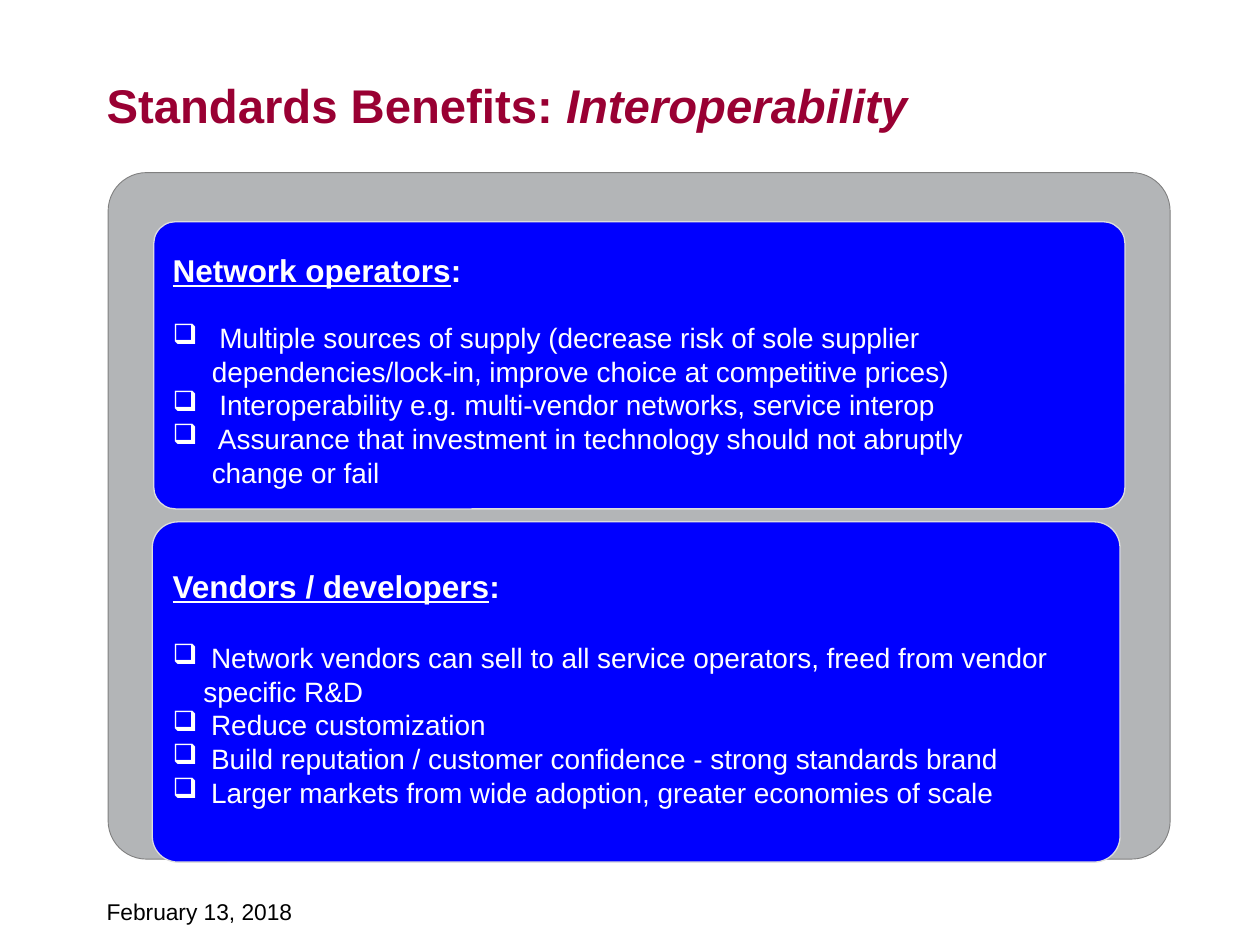
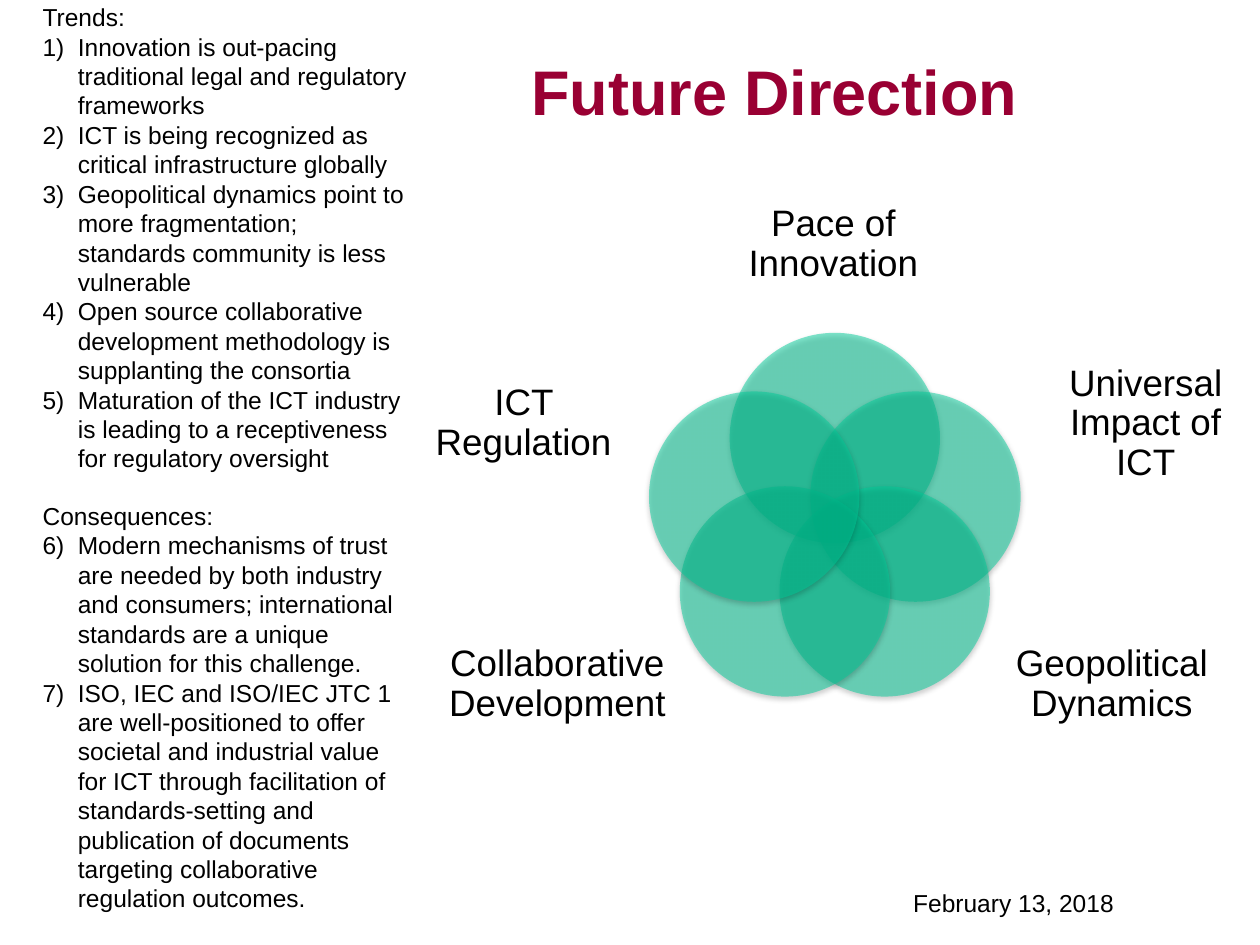
import math
import lxml.etree
import pptx
import pptx.dml.color
import pptx.enum.shapes
import pptx.enum.text
import pptx.oxml.ns
import pptx.util

Cm = pptx.util.Cm
Pt = pptx.util.Pt
qn = pptx.oxml.ns.qn
Rgb = pptx.dml.color.RGBColor.from_string
Kind = pptx.enum.shapes.MSO_SHAPE
Align = pptx.enum.text.PP_ALIGN
Side = pptx.enum.text.MSO_ANCHOR


class Theme:
    font = "Arial"
    title = Rgb("990033")
    ink = Rgb("000000")
    pale = Rgb("FFFFFF")
    panel = Rgb("B3B5B7")
    edge = Rgb("808080")
    card = Rgb("0000FF")
    rim = Rgb("DDDDDD")
    petal = Rgb("00CC99")
    head = Pt(18)
    body = Pt(16)
    label = Pt(21)
    trend = Pt(14)


def write(slide, box, paras, color, frame=None, form=None):
    area = slide.shapes.add_textbox(*map(Cm, box)).text_frame
    for key, val in {"word_wrap": True, **(frame or {})}.items():
        setattr(area, key, val)
    for spot, (runs, mark) in enumerate(paras):
        para = area.paragraphs[0] if spot == 0 else area.add_paragraph()
        for key, val in (form or {}).items():
            setattr(para, key, val)
        for words, style in runs:
            for spot, part in enumerate(words.split("\n")):
                if spot:
                    para.add_line_break()
                run = para.add_run()
                run.text = part
                for key, val in {"name": Theme.font, **style}.items():
                    setattr(run.font, key, val)
                run.font.color.rgb = color
        if mark:
            tag, attrs, indent = mark
            props = para._p.get_or_add_pPr()
            props.set("marL", str(Cm(indent)))
            props.set("indent", str(-Cm(indent)))
            lxml.etree.SubElement(props, qn(tag), attrs)
    return area


def draw(slide, kind, box, fill, line=None, width=0, bend=None):
    shape = slide.shapes.add_shape(kind, *map(Cm, box))
    shape.shadow.inherit = False
    shape.fill.solid()
    shape.fill.fore_color.rgb = fill
    if line:
        shape.line.color.rgb = line
        shape.line.width = Pt(width)
    else:
        shape.line.fill.background()
    if bend:
        shape.adjustments[0] = bend
    return shape


deck = pptx.Presentation()
deck.slide_width, deck.slide_height = Cm(25.4), Cm(19.05)
blank = deck.slide_layouts[6]
first, last = [deck.slides.add_slide(blank) for _ in range(2)]

bold = {"bold": True}
heads = [
    (first, (1.9, 0.51, 19.48, 3.18), 27,
     [("Standards Benefits: ", {}), ("Interoperability", {"italic": True})]),
    (last, (10.46, 0.36, 17.37, 2.92), 36, [("Future Direction", {})]),
]
for slide, box, size, parts in heads:
    runs = [(words, {"size": Pt(size), **bold, **style}) for words, style in parts]
    write(slide, box, [(runs, None)], Theme.title, {"vertical_anchor": Side.MIDDLE})

dates = [(first, (1.9, 17.98, 5.28, 1.27), 13), (last, (18.16, 17.78, 5.61, 1.02), 14)]
for slide, box, size in dates:
    write(slide, box, [([("February 13, 2018", {"size": Pt(size)})], None)], Theme.ink)

draw(first, Kind.ROUNDED_RECTANGLE, (2.18, 3.48, 21.41, 13.84),
     Theme.panel, Theme.edge, 0.5, 0.056)
cards = [
    ((3.1, 4.47, 19.58, 5.79), (3.23, 4.93, 18.82, 5.77), 18.4, 0.79, "Network operators", [
        "Multiple sources of supply (decrease risk of sole supplier\n"
        "dependencies/lock-in, improve choice at competitive prices)",
        "Interoperability e.g. multi-vendor networks, service interop",
        "Assurance that investment in technology should not abruptly\nchange or fail",
    ]),
    ((3.07, 10.52, 19.51, 6.86), (3.23, 11.3, 18.82, 5.87), 20.7, 0.62, "Vendors / developers", [
        "Network vendors can sell to all service operators, freed from vendor\nspecific R&D",
        "Reduce customization",
        "Build reputation / customer confidence - strong standards brand",
        "Larger markets from wide adoption, greater economies of scale",
    ]),
]
for back, box, gap, indent, name, items in cards:
    draw(first, Kind.ROUNDED_RECTANGLE, back, Theme.card, Theme.rim, 0.75, 0.076)
    style = {"size": Theme.head, **bold}
    paras = [([(name, {**style, "underline": True}), (":", style)], None)]
    for item in items:
        runs = [(" " + item, {"size": Theme.body})]
        paras.append((runs, ("a:buChar", {"char": "❑"}, indent)))
    area = write(first, box, paras, Theme.pale)
    area.paragraphs[0].space_after = Pt(gap)

mid, high, reach, wide = 16.83, 10.54, 1.71, 4.24
labels = [
    ("Pace of Innovation", (14.35, 3.51, 4.9, 2.84)),
    ("Universal Impact of ICT", (20.9, 7.01, 4.39, 3.07)),
    ("Geopolitical Dynamics", (20.22, 12.27, 4.39, 3.07)),
    ("Collaborative Development", (9.04, 12.27, 4.39, 3.07)),
    ("ICT Regulation", (8.36, 7.01, 4.39, 3.07)),
]
snug = {"vertical_anchor": Side.MIDDLE, "margin_left": 0, "margin_right": 0,
        "margin_top": 0, "margin_bottom": 0}
tight = {"alignment": Align.CENTER, "line_spacing": 0.9}
shade = {"blurRad": str(Pt(3.1)), "dist": str(Pt(1.6)), "dir": "5400000", "rotWithShape": "0"}
for turn, (words, box) in enumerate(labels):
    angle = math.tau * turn / len(labels)
    left = mid + reach * math.sin(angle) - wide / 2
    top = high - reach * math.cos(angle) - wide / 2
    petal = draw(last, Kind.OVAL, (left, top, wide, wide), Theme.petal)
    props = petal._element.spPr
    tint = props.find(qn("a:solidFill")).find(qn("a:srgbClr"))
    lxml.etree.SubElement(tint, qn("a:alpha"), val="50000")
    glow = lxml.etree.SubElement(props.find(qn("a:effectLst")), qn("a:outerShdw"), shade)
    tint = lxml.etree.SubElement(glow, qn("a:srgbClr"), val=str(Theme.ink))
    lxml.etree.SubElement(tint, qn("a:alpha"), val="38000")
    write(last, box, [([(words, {"size": Theme.label})], None)], Theme.ink, snug, tight)

lists = [
    ("Trends:", [
        "Innovation is out-pacing traditional legal and regulatory frameworks",
        "ICT is being recognized as critical infrastructure globally",
        "Geopolitical dynamics point to more fragmentation; standards community is less vulnerable",
        "Open source collaborative development methodology is supplanting the consortia",
        "Maturation of the ICT industry is leading to a receptiveness for regulatory oversight",
    ]),
    ("Consequences:", [
        "Modern mechanisms of trust are needed by both industry and consumers; "
        "international standards are a unique solution for this challenge.",
        "ISO, IEC and ISO/IEC JTC 1 are well-positioned to offer societal and industrial value "
        "for ICT through facilitation of standards-setting and publication of documents "
        "targeting collaborative regulation outcomes.",
    ]),
]
paras, start = [], 1
for name, items in lists:
    paras.append(([(name, {"size": Theme.trend})], None))
    count = {"type": "arabicParenR", "startAt": str(start)}
    for item in items:
        paras.append(([(item, {"size": Theme.trend})], ("a:buAutoNum", count, 0.71)))
    start += len(items)
area = write(last, (0.61, -0.08, 7.87, 18.8), paras, Theme.ink)
area.paragraphs[len(lists[0][1]) + 1].space_before = Pt(16.1)

deck.save("out.pptx")
